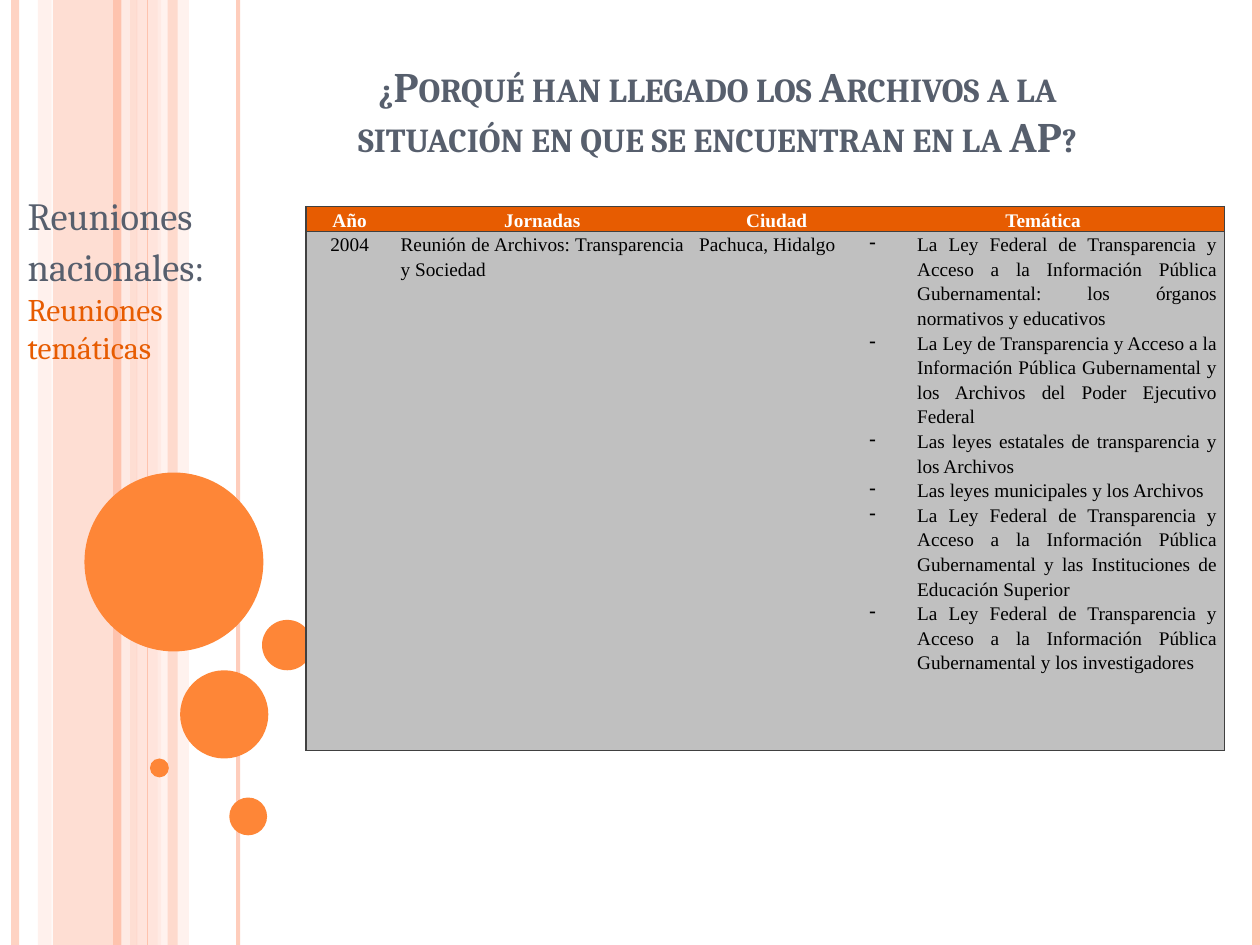
from lxml import etree
from pptx import Presentation
from pptx.dml.color import RGBColor
from pptx.enum.shapes import MSO_CONNECTOR, MSO_SHAPE
from pptx.enum.text import MSO_ANCHOR, MSO_AUTO_SIZE, PP_ALIGN
from pptx.oxml.ns import qn
from pptx.util import Inches, Pt


def paint(color_format, color, opacity=100):
    """Set a hex colour, with opacity in percent."""
    color_format.rgb = RGBColor.from_string(color)
    if opacity < 100:
        for node in color_format._xFill.iter(qn("a:srgbClr")):
            etree.SubElement(node, qn("a:alpha"), val=str(opacity * 1000))


def format_paragraph(paragraph, size, color, font, align, bold=False):
    paragraph.alignment = align
    paragraph.font.size = Pt(size)
    paragraph.font.name = font
    paragraph.font.bold = bold
    paint(paragraph.font.color, color)


presentation = Presentation()
presentation.slide_width = Inches(10)
presentation.slide_height = Inches(7.5)
slide = presentation.slides.add_slide(presentation.slide_layouts[0])
shapes = slide.shapes
title, subtitle = slide.placeholders

# Vertical bands: left, width, colour, opacity
bands = [
    (0.42, 0.67, "FEC3AE", 54),
    (0.3, 0.11, "FFD9CE", 36),
    (1.08, 0.2, "FFD9CE", 70),
    (1.25, 0.25, "FFEDE8", 71),
    (1.33, 0.08, "FEC3AE", 51),
]
for left, width, color, opacity in bands:
    band = shapes.add_shape(MSO_SHAPE.RECTANGLE, Inches(left), 0, Inches(width), Inches(7.5))
    band.shadow.inherit = False
    band.fill.solid()
    paint(band.fill.fore_color, color, opacity)
    band.line.fill.background()

# Vertical lines: position, thickness, colour, opacity
stripes = [
    (0.12, 4.5, "FEC3AE", 73),
    (1, 4.5, "FFEDE8", 83),
    (0.93, 4.5, "FEC3AE", 100),
    (1.89, 2.25, "FEC3AE", 82),
    (1.17, 0.75, "FEC3AE", 100),
    (9.97, 4.5, "FEC3AE", 100),
]
for x, thickness, color, opacity in stripes:
    stripe = shapes.add_connector(MSO_CONNECTOR.STRAIGHT, Inches(x), 0, Inches(x), Inches(7.5))
    stripe.line.width = Pt(thickness)
    stripe.line.fill.solid()
    paint(stripe.line.fill.fore_color, color, opacity)
    etree.SubElement(stripe._element.spPr, qn("a:effectLst"))

# Circles: left, top, diameter
circles = [
    (0.67, 3.75, 1.42),
    (1.43, 5.32, 0.7),
    (1.19, 6.02, 0.15),
    (1.82, 6.33, 0.3),
    (2.08, 4.92, 0.4),
]
for left, top, diameter in circles:
    circle = shapes.add_shape(MSO_SHAPE.OVAL, Inches(left), Inches(top), Inches(diameter), Inches(diameter))
    circle.shadow.inherit = False
    circle.fill.solid()
    paint(circle.fill.fore_color, "FE8637")
    circle.line.fill.background()

# Title and side text, brought in front of the decoration
boxes = [
    (title, 2.32, 0.29, 6.75, 1.04, MSO_ANCHOR.BOTTOM),
    (subtitle, 0.12, 1.47, 2.05, 5.28, MSO_ANCHOR.TOP),
]
for box, left, top, width, height, anchor in boxes:
    box.left, box.top, box.width, box.height = (Inches(n) for n in (left, top, width, height))
    box.text_frame.word_wrap = True
    box.text_frame.auto_size = MSO_AUTO_SIZE.NONE
    box.text_frame.vertical_anchor = anchor
    shapes._spTree.append(box._element)

paragraph = title.text_frame.paragraphs[0]
run = paragraph.add_run()
run.text = "¿Porqué han llegado los Archivos a la situación en que se encuentran en la AP?"
format_paragraph(paragraph, 24, "575F6D", "Cambria", PP_ALIGN.CENTER, True)
run.font._element.set("cap", "small")

paragraph = subtitle.text_frame.paragraphs[0]
format_paragraph(paragraph, 22, "575F6D", "Cambria", PP_ALIGN.JUSTIFY)
paragraph.space_before = Pt(6)
for text, size, color in [
    ("Reuniones nacionales:", 22, "575F6D"),
    (" ", 25, "575F6D"),
    ("Reuniones temáticas", 18, "E75C01"),
]:
    run = paragraph.add_run()
    run.text = text
    run.font.size = Pt(size)
    paint(run.font.color, color)

# Table of meetings
topics = [
    "La Ley Federal de Transparencia y Acceso a la Información Pública Gubernamental: los órganos normativos y educativos",
    "La Ley de Transparencia y Acceso a la Información Pública Gubernamental y los Archivos del Poder Ejecutivo Federal",
    "Las leyes estatales de transparencia y los Archivos",
    "Las leyes municipales y los Archivos",
    "La Ley Federal de Transparencia y Acceso a la Información Pública Gubernamental y las Instituciones de Educación Superior",
    "La Ley Federal de Transparencia y Acceso a la Información Pública Gubernamental y los investigadores",
]
rows = [
    ["Año", "Jornadas", "Ciudad", "Temática"],
    ["2004", "Reunión de Archivos: Transparencia y Sociedad", "Pachuca, Hidalgo", "\n".join(topics)],
]
table = shapes.add_table(2, 4, Inches(2.43), Inches(1.64), Inches(7.29), Inches(4.3)).table
table.first_row = table.horz_banding = False
# "No Style, No Grid"
table._tbl.tblPr.find(qn("a:tableStyleId")).text = "{2D5ABB26-0587-4C30-8999-92F81FD0307C}"
for column, width in zip(table.columns, [0.69, 2.37, 1.35, 2.88]):
    column.width = Inches(width)
for row, height in zip(table.rows, [0.18, 4.12]):
    row.height = Inches(height)

for r, texts in enumerate(rows):
    header = r == 0
    for c, text in enumerate(texts):
        cell = table.cell(r, c)
        cell.margin_left = cell.margin_right = Inches(0.06)
        cell.margin_top = cell.margin_bottom = 0
        cell.text = text
        align = PP_ALIGN.CENTER if header or c == 0 else PP_ALIGN.JUSTIFY
        for paragraph in cell.text_frame.paragraphs:
            format_paragraph(paragraph, 11, "FFFFFF" if header else "000000", "Times New Roman", align, header)
            paragraph.line_spacing = 1.15
            if not header and c == 3:
                properties = paragraph._p.get_or_add_pPr()
                properties.set("marL", str(Inches(0.38)))
                properties.set("indent", str(-Inches(0.38)))
                bullet = etree.Element(qn("a:buChar"), char="-")
                properties.find(qn("a:defRPr")).addprevious(bullet)

        # Borders above and below each row, and at the outer sides
        cell_properties = cell._tc.get_or_add_tcPr()
        sides = ["L"] * (c == 0) + ["R"] * (c == 3) + ["T", "B"]
        for side in sides:
            border = etree.SubElement(cell_properties, qn(f"a:ln{side}"), w=str(Pt(1)))
            border_fill = etree.SubElement(border, qn("a:solidFill"))
            etree.SubElement(border_fill, qn("a:srgbClr"), val="404040")
        cell.fill.solid()
        paint(cell.fill.fore_color, "E75C01" if header else "C0C0C0")

presentation.save("out.pptx")
